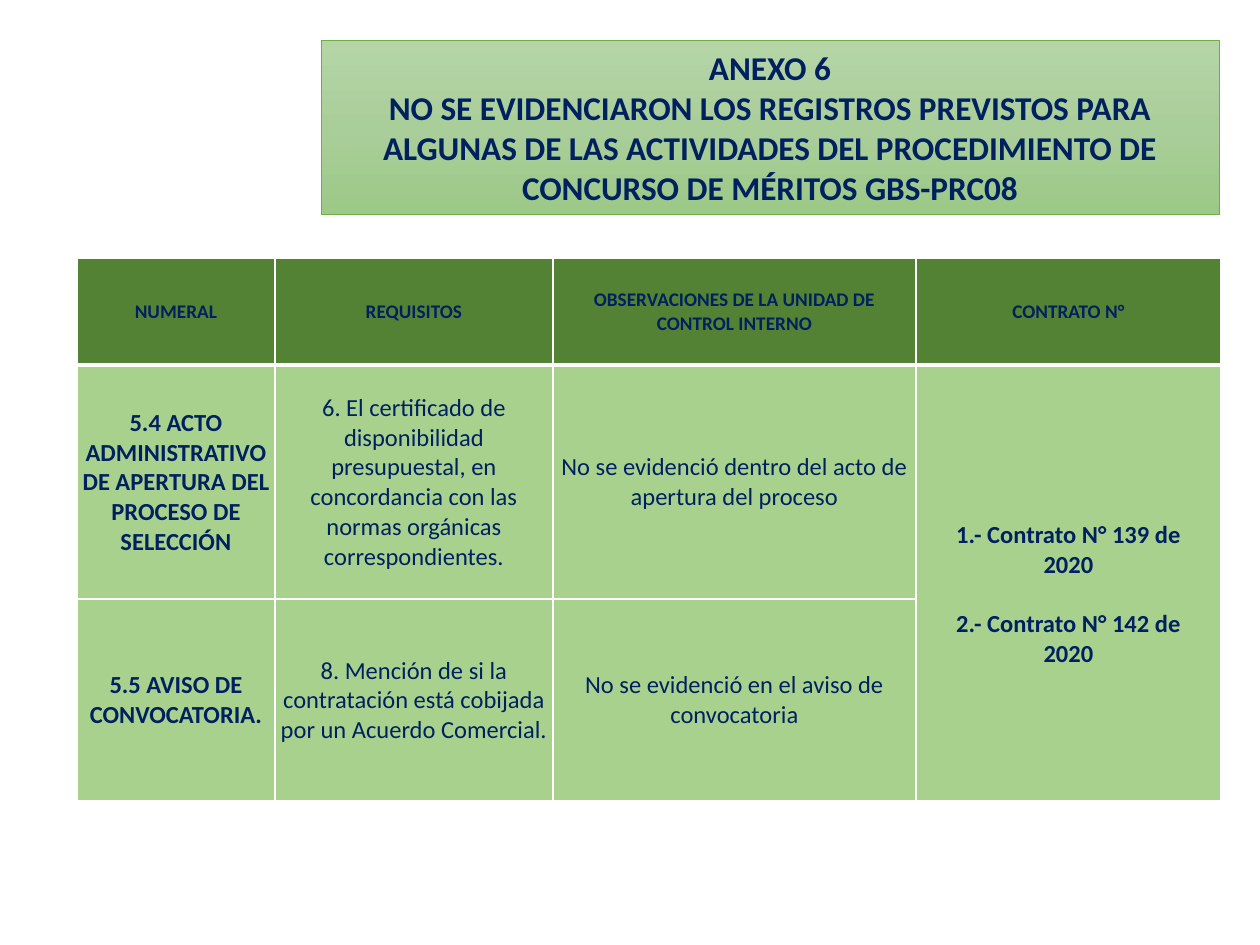
from copy import deepcopy
from dataclasses import dataclass

from lxml import etree
from pptx import Presentation
from pptx import util as u
from pptx.dml.color import RGBColor
from pptx.enum import text
from pptx.oxml.ns import qn

EMU_PER_INCH = 914400
PX_PER_INCH = 126
NAVY, WHITE, EDGE = "002060", "FFFFFF", "70AD47"
HEADER_GREEN, BODY_GREEN = "548235", "A9D18E"
GRADIENT = [(0, "B5D5A7"), (0.5, "AACE9A"), (1, "9CC987")]

TITLE = [
    "ANEXO 6",
    "NO SE EVIDENCIARON LOS REGISTROS PREVISTOS PARA ALGUNAS DE LAS "
    "ACTIVIDADES DEL PROCEDIMIENTO DE CONCURSO DE MÉRITOS GBS-PRC08",
]
HEADERS = ["NUMERAL", "REQUISITOS",
           "OBSERVACIONES DE LA UNIDAD DE CONTROL INTERNO", "CONTRATO N°"]
CONTRACTS = ["1.- Contrato N° 139 de 2020", "2.- Contrato N° 142 de 2020"]
COLUMN_WIDTHS = [198, 278, 363, 305]
ROW_HEIGHTS = [107, 234, 202]


@dataclass
class Finding:
    number: str
    requirement: str
    observation: str


FINDINGS = [
    Finding("5.4 ACTO ADMINISTRATIVO DE APERTURA DEL PROCESO DE SELECCIÓN",
            "6. El certificado de disponibilidad presupuestal, en concordancia "
            "con las normas orgánicas correspondientes.",
            "No se evidenció dentro del acto de apertura del proceso"),
    Finding("5.5 AVISO DE CONVOCATORIA.",
            "8. Mención de si la contratación está cobijada por un Acuerdo Comercial.",
            "No se evidenció en el aviso de convocatoria"),
]


def px(length: int) -> int:
    return round(length * EMU_PER_INCH / PX_PER_INCH)


def color(value: str) -> RGBColor:
    return RGBColor.from_string(value)


def write(frame, paragraphs: list[str], *, size: int, bold: bool = True,
          gap: int = 0) -> None:
    """Fill a text frame with centred paragraphs, gap points apart."""
    frame.word_wrap = True
    for index, content in enumerate(paragraphs):
        paragraph = frame.paragraphs[0] if index == 0 else frame.add_paragraph()
        paragraph.alignment = text.PP_ALIGN.CENTER
        paragraph.line_spacing = 1.0
        paragraph.space_before = u.Pt(gap if index else 0)
        run = paragraph.add_run()
        run.text = content
        run.font.name = "Calibri"
        run.font.size = u.Pt(size)
        run.font.bold = bold
        run.font.color.rgb = color(NAVY)


def style_cell(cell, fill: str, top: int = 1, bottom: int = 1) -> None:
    """Set white borders (widths in points), then the fill, as the schema orders."""
    properties = cell._tc.get_or_add_tcPr()
    for side, width in (("L", 1), ("R", 1), ("T", top), ("B", bottom)):
        border = etree.SubElement(properties, qn(f"a:ln{side}"), w=str(u.Pt(width)))
        solid = etree.SubElement(border, qn("a:solidFill"))
        etree.SubElement(solid, qn("a:srgbClr"), val=WHITE)
    cell.fill.solid()
    cell.fill.fore_color.rgb = color(fill)
    cell.vertical_anchor = text.MSO_ANCHOR.MIDDLE
    cell.margin_left = cell.margin_right = cell.margin_top = px(1)
    cell.margin_bottom = 0


def add_title(slide) -> None:
    title = slide.shapes.title
    title.left, title.top, title.width, title.height = map(px, (321, 40, 898, 174))
    title.fill.gradient()
    stop_list = title._element.spPr.find(".//" + qn("a:gsLst"))
    stop_list.insert(1, deepcopy(stop_list[0]))
    for stop, (position, value) in zip(title.fill.gradient_stops, GRADIENT):
        stop.position = position
        stop.color.rgb = color(value)
    title.fill.gradient_angle = 270
    title.line.color.rgb = color(EDGE)
    title.line.width = u.Pt(0.5)
    title.text_frame.auto_size = text.MSO_AUTO_SIZE.NONE
    title.text_frame.vertical_anchor = text.MSO_ANCHOR.MIDDLE
    write(title.text_frame, TITLE, size=19)


def add_findings_table(slide) -> None:
    table = slide.shapes.add_table(
        len(ROW_HEIGHTS), len(COLUMN_WIDTHS), px(77), px(258),
        px(sum(COLUMN_WIDTHS)), px(sum(ROW_HEIGHTS))).table
    table.horz_banding = False
    for column, width in zip(table.columns, COLUMN_WIDTHS):
        column.width = px(width)
    for row, height in zip(table.rows, ROW_HEIGHTS):
        row.height = px(height)

    for column, header in enumerate(HEADERS):
        style_cell(table.cell(0, column), HEADER_GREEN, bottom=3)
        write(table.cell(0, column).text_frame, [header], size=11)
        for row in range(1, len(ROW_HEIGHTS)):
            style_cell(table.cell(row, column), BODY_GREEN, top=3 if row == 1 else 1)

    for row, finding in enumerate(FINDINGS, start=1):
        contents = (finding.number, finding.requirement, finding.observation)
        for column, content in enumerate(contents):
            write(table.cell(row, column).text_frame, [content], size=14,
                  bold=column == 0)

    contracts = table.cell(1, 3)
    contracts.merge(table.cell(2, 3))
    contracts.vertical_anchor = text.MSO_ANCHOR.TOP
    contracts.margin_top = px(155)
    contracts.margin_left = contracts.margin_right = px(13)
    write(contracts.text_frame, CONTRACTS, size=14, gap=17)


def main() -> None:
    presentation = Presentation()
    presentation.slide_width = px(1260)
    presentation.slide_height = px(945)
    slide = presentation.slides.add_slide(presentation.slide_layouts[5])
    add_title(slide)
    add_findings_table(slide)
    presentation.save("out.pptx")


if __name__ == "__main__":
    main()
